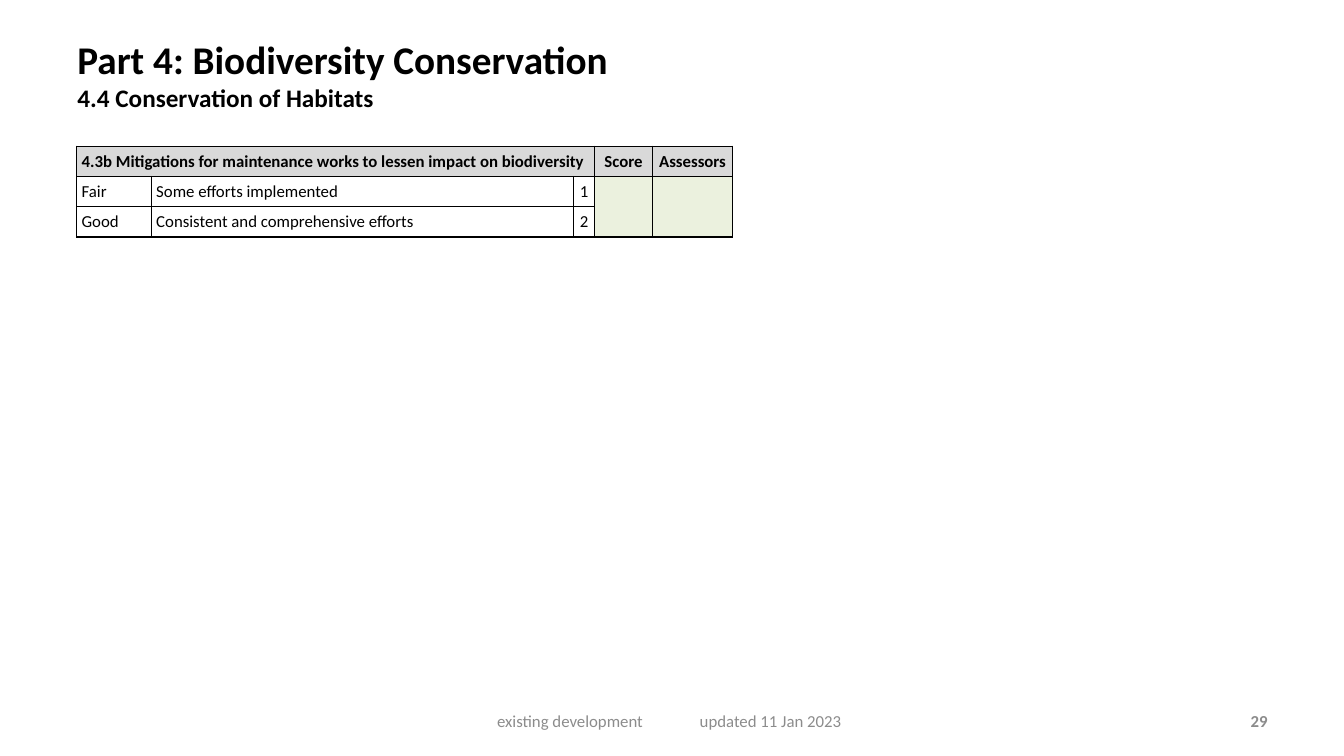
from lxml import etree
from pptx import Presentation
from pptx.dml.color import RGBColor
from pptx.enum.text import MSO_ANCHOR as Anchor, PP_ALIGN as Align
from pptx.oxml.ns import qn
from pptx.util import Inches, Pt

BLACK, GREY, HEADER, ENTRY, WHITE = "000000", "8C8C8C", "D9D9D9", "EBF1DE", "FFFFFF"
COLUMN_WIDTHS = [0.74, 4.19, 0.21, 0.57, 0.8]
ROW_HEIGHT = 0.3
RATINGS = [
    ["4.3b Mitigations for maintenance works to lessen impact on biodiversity",
     "", "", "Score", "Assessors"],
    ["Fair", "Some efforts implemented", "1", "", ""],
    ["Good", "Consistent and comprehensive efforts", "2", "", ""],
]


def color(code):
    """Turn a hex string into a colour."""
    return RGBColor.from_string(code)


def style(paragraph, size, code=BLACK, bold=False, align=Align.LEFT):
    """Set the font and alignment of a paragraph."""
    paragraph.alignment = align
    font = paragraph.font
    font.name, font.size, font.bold = "Calibri", Pt(size), bold
    font.color.rgb = color(code)


def add_frame(slide, left, top, width, height, anchor=Anchor.MIDDLE):
    """Add a wrapping text box and return its text frame."""
    box = slide.shapes.add_textbox(*map(Inches, (left, top, width, height)))
    frame = box.text_frame
    frame.word_wrap = True
    frame.vertical_anchor = anchor
    return frame


def add_heading(slide, left, top, width, height):
    """Place the part title above its section title."""
    frame = add_frame(slide, left, top, width, height, Anchor.TOP)
    part, section = frame.paragraphs[0], frame.add_paragraph()
    part.text = "Part 4: Biodiversity Conservation"
    section.text = "4.4 Conservation of Habitats"
    style(part, 28, bold=True)
    style(section, 18, bold=True)


def add_borders(cell):
    """Draw a thin black line on each side of a cell."""
    properties = cell._tc.get_or_add_tcPr()
    for position, side in enumerate(("lnL", "lnR", "lnT", "lnB")):
        line = etree.Element(qn(f"a:{side}"), w=str(Pt(1)))
        fill = etree.SubElement(line, qn("a:solidFill"))
        etree.SubElement(fill, qn("a:srgbClr"), val=BLACK)
        properties.insert(position, line)


def add_ratings(slide, left, top):
    """Place the rating table with its score and assessor fields."""
    rows, columns = len(RATINGS), len(COLUMN_WIDTHS)
    table = slide.shapes.add_table(
        rows, columns, Inches(left), Inches(top),
        Inches(sum(COLUMN_WIDTHS)), Inches(ROW_HEIGHT * rows)).table
    for column, width in zip(table.columns, COLUMN_WIDTHS):
        column.width = Inches(width)
    for r, texts in enumerate(RATINGS):
        table.rows[r].height = Inches(ROW_HEIGHT)
        for c, text in enumerate(texts):
            cell = table.cell(r, c)
            cell.text = text
            cell.vertical_anchor = Anchor.MIDDLE
            cell.margin_left = cell.margin_right = Inches(0.05)
            cell.margin_top = cell.margin_bottom = Inches(0.05)
            cell.fill.solid()
            cell.fill.fore_color.rgb = color(
                HEADER if r == 0 else ENTRY if c > 2 else WHITE)
            style(cell.text_frame.paragraphs[0], 12, bold=r == 0,
                  align=Align.CENTER if c > 1 else Align.LEFT)
            add_borders(cell)
    table.cell(0, 0).merge(table.cell(0, 2))
    for c in (3, 4):
        table.cell(1, c).merge(table.cell(2, c))


def add_footer(slide, left, top, width, height):
    """Place the development status and the update date."""
    frame = add_frame(slide, left, top, width, height)
    frame.margin_left = Inches(0.37)
    status = frame.paragraphs[0]
    status.text = "existing development\tupdated 11 Jan 2023"
    tabs = etree.SubElement(status._p.get_or_add_pPr(), qn("a:tabLst"))
    etree.SubElement(tabs, qn("a:tab"), pos=str(Inches(2.01)), algn="l")
    style(status, 12, GREY)


def add_page_number(slide, left, top, width, height):
    """Place the page number at the right of its box."""
    number = add_frame(slide, left, top, width, height).paragraphs[0]
    number.text = "29"
    style(number, 12, GREY, bold=True, align=Align.RIGHT)


def main():
    """Build and save the slide."""
    deck = Presentation()
    deck.slide_width, deck.slide_height = Inches(13.33), Inches(7.5)
    slide = deck.slides.add_slide(deck.slide_layouts[6])
    add_heading(slide, 0.67, 0.3, 10.36, 0.99)
    add_ratings(slide, 0.76, 1.45)
    add_footer(slide, 4.56, 6.95, 4.22, 0.4)
    add_page_number(slide, 9.56, 6.95, 3.11, 0.4)
    deck.save("out.pptx")


if __name__ == "__main__":
    main()
